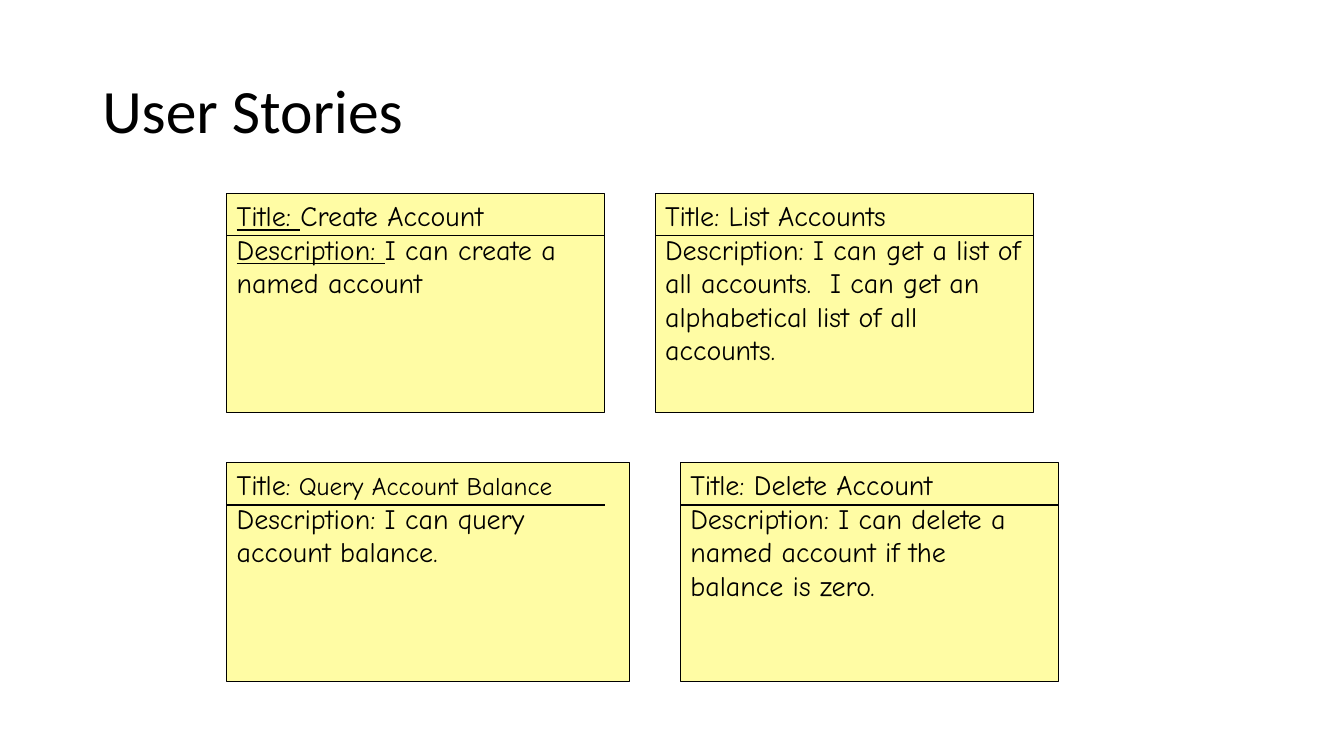
from lxml import etree
from pptx import Presentation
from pptx.dml.color import RGBColor
from pptx.enum.shapes import MSO_CONNECTOR, MSO_SHAPE
from pptx.enum.text import MSO_ANCHOR, PP_ALIGN
from pptx.oxml.ns import qn
from pptx.util import Pt

RECTANGLE = MSO_SHAPE.RECTANGLE
STRAIGHT = MSO_CONNECTOR.STRAIGHT
TOP, MIDDLE = MSO_ANCHOR.TOP, MSO_ANCHOR.MIDDLE
LEFT = PP_ALIGN.LEFT

CARD_WIDTH, CARD_HEIGHT, RULE_DROP = 270, 156.24, 30.24
TOP_ROW, BOTTOM_ROW = 138.24, 330.48
LEFT_COLUMN, GAP = 162, 36
WIDE_CARD = CARD_WIDTH + 18


def color(hex_value):
    return RGBColor.from_string(hex_value)


class StoryBoard:
    """Draws a heading and story cards on one slide in a shared style."""

    ink = "000000"
    paper = "FFFCA4"
    heading_font = "Calibri"
    card_font = "Comic Neue"
    heading_size = 44
    card_size = 20
    line_width = 0.75

    def __init__(self, slide):
        self.slide = slide

    def add_run(self, paragraph, text, font, size, underline=False):
        run = paragraph.add_run()
        run.text = text
        run.font.name = font
        run.font.size = Pt(size)
        run.font.underline = underline
        run.font.color.rgb = color(self.ink)

    def heading(self, text, left, top, width, height):
        box = self.slide.shapes.add_textbox(Pt(left), Pt(top), Pt(width), Pt(height))
        frame = box.text_frame
        frame.word_wrap = True
        frame.vertical_anchor = MIDDLE
        paragraph = frame.paragraphs[0]
        paragraph.line_spacing = 0.9
        self.add_run(paragraph, text, self.heading_font, self.heading_size)

    def rule(self, left, top, width):
        rule = self.slide.shapes.add_connector(
            STRAIGHT, Pt(left), Pt(top), Pt(left + width), Pt(top))
        rule.line.color.rgb = color(self.ink)
        rule.line.width = Pt(self.line_width)
        etree.SubElement(rule._element.spPr, qn("a:effectLst"))

    def card(self, left, top, title, description, width=CARD_WIDTH):
        card = self.slide.shapes.add_shape(
            RECTANGLE, Pt(left), Pt(top), Pt(width), Pt(CARD_HEIGHT))
        card.shadow.inherit = False
        card.fill.solid()
        card.fill.fore_color.rgb = color(self.paper)
        card.line.color.rgb = color(self.ink)
        card.line.width = Pt(self.line_width)
        frame = card.text_frame
        frame.word_wrap = True
        frame.vertical_anchor = TOP
        for paragraph, runs in zip((frame.paragraphs[0], frame.add_paragraph()),
                                   (title, description)):
            paragraph.alignment = LEFT
            for text, style in runs:
                self.add_run(paragraph, text, self.card_font,
                             **{"size": self.card_size, **style})
        self.rule(left, top + RULE_DROP, CARD_WIDTH)


def main():
    deck = Presentation()
    deck.slide_width, deck.slide_height = Pt(960), Pt(540)
    board = StoryBoard(deck.slides.add_slide(deck.slide_layouts[6]))
    plain, underlined, smaller = {}, {"underline": True}, {"size": 18}

    board.heading("User Stories", 66, 28.8, 828, 104.4)
    board.card(LEFT_COLUMN, TOP_ROW,
               [("Title: ", underlined), ("Create Account", plain)],
               [("Description: ", underlined), ("I can create a named account", plain)])
    board.card(LEFT_COLUMN + CARD_WIDTH + GAP, TOP_ROW,
               [("Title: List Accounts", plain)],
               [("Description: I can get a list of all accounts.  "
                 "I can get an alphabetical list of all accounts.", plain)])
    board.card(LEFT_COLUMN + WIDE_CARD + GAP, BOTTOM_ROW,
               [("Title: Delete Account", plain)],
               [("Description: I can delete a named account if the balance is zero.", plain)])
    board.card(LEFT_COLUMN, BOTTOM_ROW,
               [("Title", plain), (": Query Account Balance", smaller)],
               [("Description: I can query account balance.", plain)],
               width=WIDE_CARD)
    deck.save("out.pptx")


if __name__ == "__main__":
    main()
